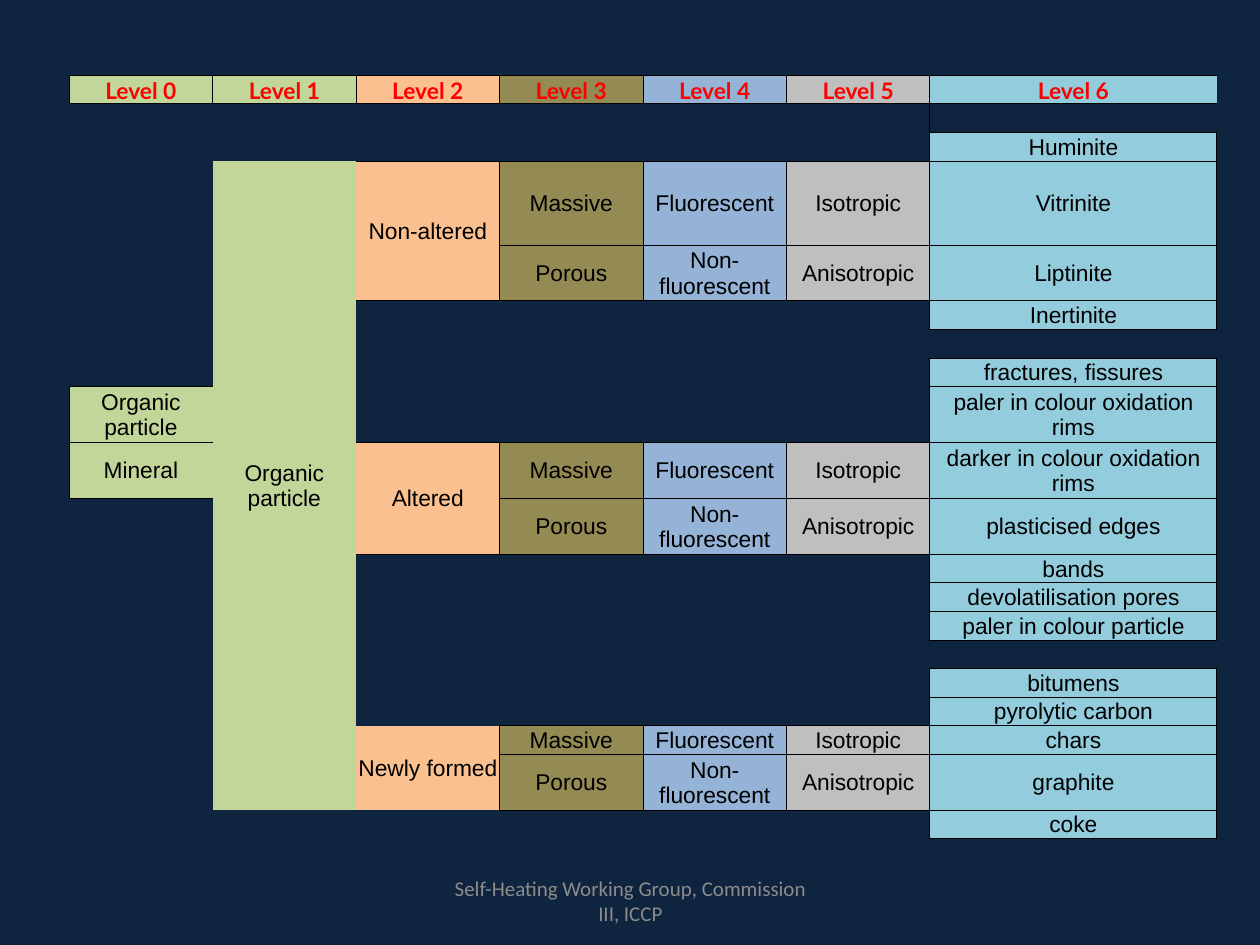
from lxml import etree
from pptx import Presentation
from pptx.dml.color import RGBColor
from pptx.enum.text import MSO_ANCHOR, PP_ALIGN
from pptx.oxml.ns import qn
from pptx.util import Pt

MID, LOW = MSO_ANCHOR.MIDDLE, MSO_ANCHOR.BOTTOM
CENTER = PP_ALIGN.CENTER
NO_STYLE = "{2D5ABB26-0587-4C30-8999-92F81FD0307C}"


def color(code):
    return RGBColor.from_string(code)


def border(cell, sides):
    """Draw thin black lines on the sides named by letters out of LRTB."""
    props = cell._tc.get_or_add_tcPr()
    for side in "LRTB":
        if side in sides:
            line = etree.SubElement(props, qn("a:ln" + side), w=str(Pt(0.5)))
            solid = etree.SubElement(line, qn("a:solidFill"))
            etree.SubElement(solid, qn("a:srgbClr"), val="000000")


prs = Presentation()
prs.slide_width, prs.slide_height = Pt(720), Pt(540)
slide = prs.slides.add_slide(prs.slide_layouts[6])
slide.background.fill.solid()
slide.background.fill.fore_color.rgb = color("0F243E")

# Footer
box = slide.shapes.add_textbox(Pt(246.2), Pt(500.4), Pt(228.2), Pt(28.8))
frame = box.text_frame
frame.word_wrap = True
frame.vertical_anchor = MID
para = frame.paragraphs[0]
para.alignment = CENTER
run = para.add_run()
run.text = "Self-Heating Working Group, Commission III, ICCP"
for name, value in {"size": Pt(12), "name": "Calibri"}.items():
    setattr(run.font, name, value)
run.font.color.rgb = color("8C8C8C")

# Table content: (row, column) -> (text, border sides)
fills = ["C2D69A", "C2D69A", "FAC090", "948B54", "95B3D7", "BFBFBF", "93CDDD"]
cells = {(0, col): (f"Level {col}", "LRTB") for col in range(6)}
cells[0, 6] = ("Level 6", "LTB")
cells[3, 1] = ("Organic particle", "")
cells[8, 0] = ("Organic particle", "LTB")
cells[9, 0] = ("Mineral", "LTB")

pairs = [("Massive", "Porous"), ("Fluorescent", "Non-fluorescent"),
         ("Isotropic", "Anisotropic")]
groups = [(3, "Non-altered", "RT"), (9, "Altered", "RT"), (17, "Newly formed", "R")]
for top, state, sides in groups:
    cells[top, 2] = (state, sides)
    for col, pair in enumerate(pairs, 3):
        for step, text in enumerate(pair):
            cells[top + step, col] = (text, "LRTB")

kinds = {
    2: ["Huminite", "Vitrinite", "Liptinite", "Inertinite"],
    7: ["fractures, fissures", "paler in colour oxidation rims",
        "darker in colour oxidation rims", "plasticised edges", "bands",
        "devolatilisation pores", "paler in colour particle"],
    15: ["bitumens", "pyrolytic carbon", "chars", "graphite", "coke"],
}
for top, names in kinds.items():
    for row, text in enumerate(names, top):
        cells[row, 6] = (text, "LRTB")

# Table grid
widths = [82] * 6 + [164]
heights = [16.35] * 20
heights[3] = 48
for row in (4, 8, 9, 10, 18):
    heights[row] = 30.9
shape = slide.shapes.add_table(len(heights), len(widths), Pt(39.5), Pt(43),
                               Pt(sum(widths)), Pt(sum(heights)))
table = shape.table
table.first_row = table.horz_banding = False
shape._element.find(".//" + qn("a:tableStyleId")).text = NO_STYLE
for col, width in zip(table.columns, widths):
    col.width = Pt(width)
for row, height in zip(table.rows, heights):
    row.height = Pt(height)

head = {"size": Pt(13), "name": "Lato", "bold": True}
body = {"size": Pt(13), "name": "Arial", "bold": False}
inset = {"margin_left": Pt(0.7), "margin_right": Pt(0.7),
         "margin_top": Pt(0.7), "margin_bottom": 0}
for row in range(len(heights)):
    for col in range(len(widths)):
        cell = table.cell(row, col)
        for name, value in inset.items():
            setattr(cell, name, value)
        para = cell.text_frame.paragraphs[0]
        if (row, col) not in cells:
            etree.SubElement(para._p, qn("a:endParaRPr"), sz="1300")
            if (row, col) == (1, 6):
                border(cell, "LTB")
            cell.fill.background()
            continue
        text, sides = cells[row, col]
        border(cell, sides)
        cell.fill.solid()
        cell.fill.fore_color.rgb = color(fills[col])
        cell.vertical_anchor = MID if row else LOW
        para.alignment = CENTER
        run = para.add_run()
        run.text = text
        for name, value in (body if row else head).items():
            setattr(run.font, name, value)
        run.font.color.rgb = color("000000" if row else "FF0000")

table.cell(3, 1).merge(table.cell(18, 1))
for top, state, sides in groups:
    table.cell(top, 2).merge(table.cell(top + 1, 2))

prs.save("out.pptx")
